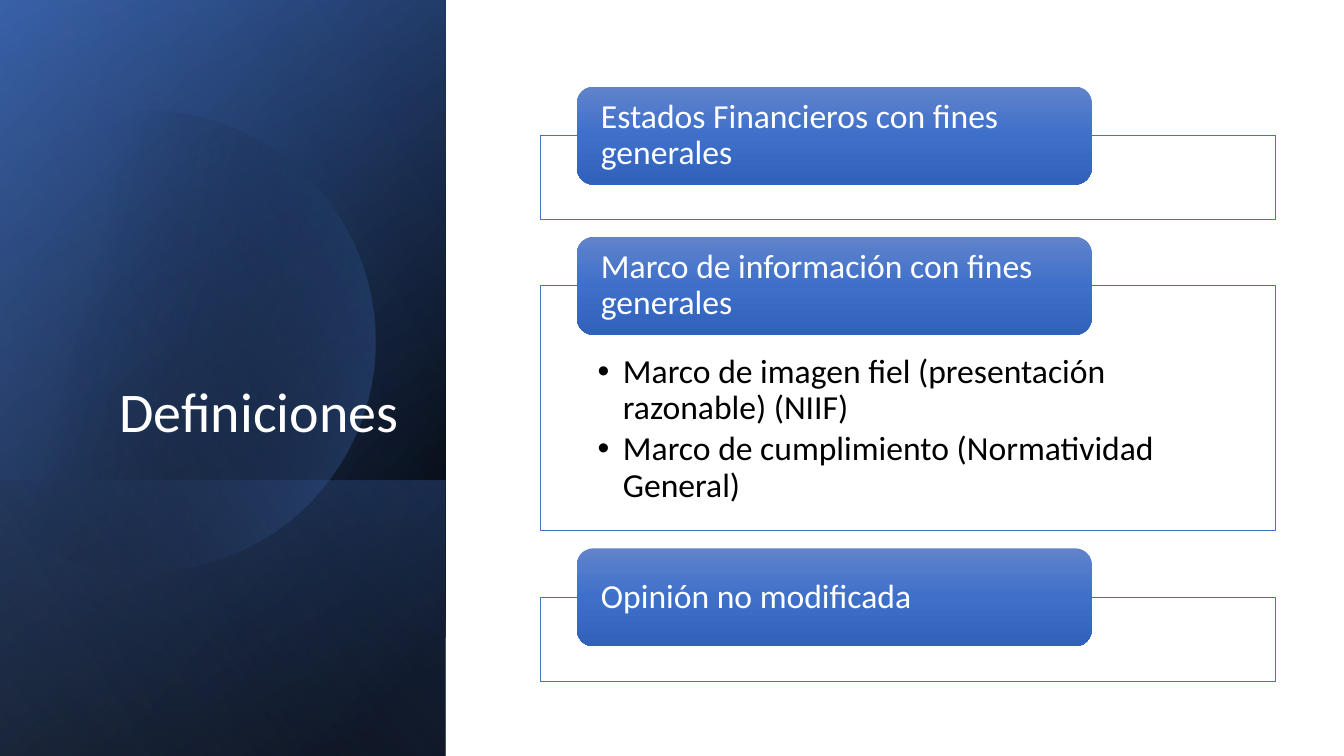
from dataclasses import dataclass

from lxml.etree import SubElement
from pptx import Presentation
from pptx.dml.color import RGBColor
from pptx.enum.shapes import MSO_SHAPE
from pptx.enum.text import MSO_ANCHOR, PP_ALIGN
from pptx.oxml.ns import qn
from pptx.util import Inches, Pt


@dataclass(frozen=True)
class Theme:
    font: str = "Calibri"
    title_size: int = 40
    body_size: int = 24
    white: str = "FFFFFF"
    black: str = "000000"
    accent: str = "4472C4"
    deep: str = "2F5597"
    pale: str = "8FAADC"
    pill: tuple = ((0, "6183CB", 100), (50, "3E70CA", 100), (100, "3062BB", 100))


@dataclass(frozen=True)
class Box:
    """Area in inches; share() takes percentages of it."""
    left: float
    top: float
    width: float
    height: float

    def share(self, left, top, width, height):
        return Box(self.left + self.width * left / 100,
                   self.top + self.height * top / 100,
                   self.width * width / 100, self.height * height / 100)

    def emu(self):
        return [Inches(n) for n in (self.left, self.top, self.width, self.height)]


THEME = Theme()
SLIDE = Box(0, 0, 13.33, 7.5)

SECTIONS = [
    ("Estados Financieros con fines generales", []),
    ("Marco de información con fines generales",
     ["Marco de imagen fiel (presentación razonable) (NIIF)",
      "Marco de cumplimiento (Normatividad General)"]),
    ("Opinión no modificada", []),
]

# Glow outline in inches from the panel's corner: start, curves, left edge
GLOW_START = (1.49, 1.1)
GLOW_CURVES = [
    ((2.46, 1.12), (3.35, 1.77), (3.63, 2.75)),
    ((3.98, 3.97), (3.28, 5.23), (2.07, 5.58)),
    ((1.31, 5.8), (0.53, 5.61), (-0.03, 5.14)),
]
GLOW_EDGE = [(-0.15, 5.03), (-0.15, 1.75), (0, 1.61)]
GLOW_CLOSE = ((0.42, 1.27), (0.95, 1.1), GLOW_START)


def set_gradient(shape, stops, angle):
    """Fill with (position %, colour, opacity %) stops along an angle."""
    shape.shadow.inherit = False
    shape.line.fill.background()
    shape.fill.gradient()
    gradient = shape._element.spPr.find(qn("a:gradFill"))
    for child in list(gradient):
        gradient.remove(child)
    gradient.set("rotWithShape", "1")
    stop_list = SubElement(gradient, qn("a:gsLst"))
    for position, colour, opacity in stops:
        stop = SubElement(stop_list, qn("a:gs"), pos=str(position * 1000))
        rgb = SubElement(stop, qn("a:srgbClr"), val=colour)
        if opacity < 100:
            SubElement(rgb, qn("a:alpha"), val=str(opacity * 1000))
    SubElement(gradient, qn("a:lin"), ang=str(angle * 60000), scaled="0")


def set_frame(shape, insets, anchor):
    frame = shape.text_frame
    frame.word_wrap = True
    frame.vertical_anchor = anchor
    (frame.margin_left, frame.margin_top,
     frame.margin_right, frame.margin_bottom) = [Inches(n) for n in insets]
    return frame


def add_run(para, text, size, colour, align=PP_ALIGN.LEFT):
    para.alignment = align
    para.line_spacing = 0.9
    span = para.add_run()
    span.text = text
    span.font.name = THEME.font
    span.font.size = Pt(size)
    span.font.color.rgb = RGBColor.from_string(colour)


def add_bullet(para):
    props = para._p.get_or_add_pPr()
    props.set("marL", str(Inches(0.25)))
    props.set("indent", str(-Inches(0.25)))
    SubElement(props, qn("a:buFont"), typeface="Arial")
    SubElement(props, qn("a:buChar"), char="•")


def add_turned_layer(page, box, stops, angle):
    """Mirrored rectangle, turned a quarter so that it covers the box."""
    turned = Box(box.left + (box.width - box.height) / 2,
                 box.top + (box.height - box.width) / 2, box.height, box.width)
    layer = page.shapes.add_shape(MSO_SHAPE.RECTANGLE, *turned.emu())
    layer.rotation = 90
    layer._element.spPr.xfrm.set("flipH", "1")
    set_gradient(layer, stops, angle)


def curve_points(start, first, second, end, steps=24):
    for step in range(1, steps + 1):
        t = step / steps
        weights = ((1 - t) ** 3, 3 * t * (1 - t) ** 2, 3 * t * t * (1 - t), t ** 3)
        yield tuple(sum(w * point[axis] for w, point in
                        zip(weights, (start, first, second, end))) for axis in (0, 1))


def add_glow(page, box):
    points = [GLOW_START]
    for curve in GLOW_CURVES:
        points += curve_points(points[-1], *curve)
    points += GLOW_EDGE
    points += curve_points(points[-1], *GLOW_CLOSE)
    placed = [(Inches(box.left + x), Inches(box.top + y)) for x, y in points]
    builder = page.shapes.build_freeform(*placed[0], scale=1.0)
    builder.add_line_segments(placed[1:], close=True)
    set_gradient(builder.convert_to_shape(),
                 [(29, THEME.black, 0), (100, THEME.accent, 43)], 14)


def add_title_panel(page, box):
    # Layered gradients
    add_turned_layer(page, box, [(8, THEME.black, 100), (100, THEME.deep, 100)], 50)
    add_turned_layer(page, box, [(0, THEME.black, 0), (99, THEME.accent, 46)], 30)
    add_turned_layer(page, box.share(0, 63.5, 100, 36.5),
                     [(2, THEME.accent, 29), (100, THEME.black, 30)], 130)
    add_glow(page, box)
    add_turned_layer(page, box, [(0, THEME.black, 0), (99, THEME.pale, 11)], 120)
    # Title
    title = page.shapes.add_textbox(*box.share(14.5, 24.5, 77.1, 35).emu())
    frame = set_frame(title, (0.1, 0.05, 0.1, 0.05), MSO_ANCHOR.BOTTOM)
    add_run(frame.paragraphs[0], "Definiciones", THEME.title_size,
            THEME.white, PP_ALIGN.RIGHT)


def add_section(page, frame_box, pill_box, heading, points):
    # Outlined frame with its bullet points
    outline = page.shapes.add_shape(MSO_SHAPE.RECTANGLE, *frame_box.emu())
    outline.shadow.inherit = False
    outline.fill.solid()
    outline.fill.fore_color.rgb = RGBColor.from_string(THEME.white)
    rgb = outline._element.spPr.find(qn("a:solidFill"))[0]
    SubElement(rgb, qn("a:alpha"), val="90000")
    outline.line.color.rgb = RGBColor.from_string(THEME.accent)
    outline.line.width = Pt(0.5)
    if points:
        frame = set_frame(outline, (0.57, 0.68, 0.57, 0.19), MSO_ANCHOR.TOP)
        for index, point in enumerate(points):
            para = frame.add_paragraph() if index else frame.paragraphs[0]
            add_run(para, point, THEME.body_size, THEME.black)
            para.space_after = Pt(3.6)
            add_bullet(para)
    # Heading pill
    pill = page.shapes.add_shape(MSO_SHAPE.ROUNDED_RECTANGLE, *pill_box.emu())
    set_gradient(pill, THEME.pill, 90)
    frame = set_frame(pill, (0.19, 0, 0.19, 0), MSO_ANCHOR.MIDDLE)
    add_run(frame.paragraphs[0], heading, THEME.body_size, THEME.white)


def add_definitions(page, box):
    pill_height, gap = 16.5, 11.2
    top = pill_height / 2
    for heading, points in SECTIONS:
        height = 41.25 if points else 14.1
        add_section(page, box.share(0, top, 100, height),
                    box.share(5, top - pill_height / 2, 70, pill_height),
                    heading, points)
        top += height + gap


def main():
    deck = Presentation()
    deck.slide_width, deck.slide_height = Inches(SLIDE.width), Inches(SLIDE.height)
    page = deck.slides.add_slide(deck.slide_layouts[6])
    add_title_panel(page, SLIDE.share(0, 0, 33.16, 100))
    add_definitions(page, SLIDE.share(40.2, 11.45, 54.7, 78.55))
    deck.save("out.pptx")


if __name__ == "__main__":
    main()
